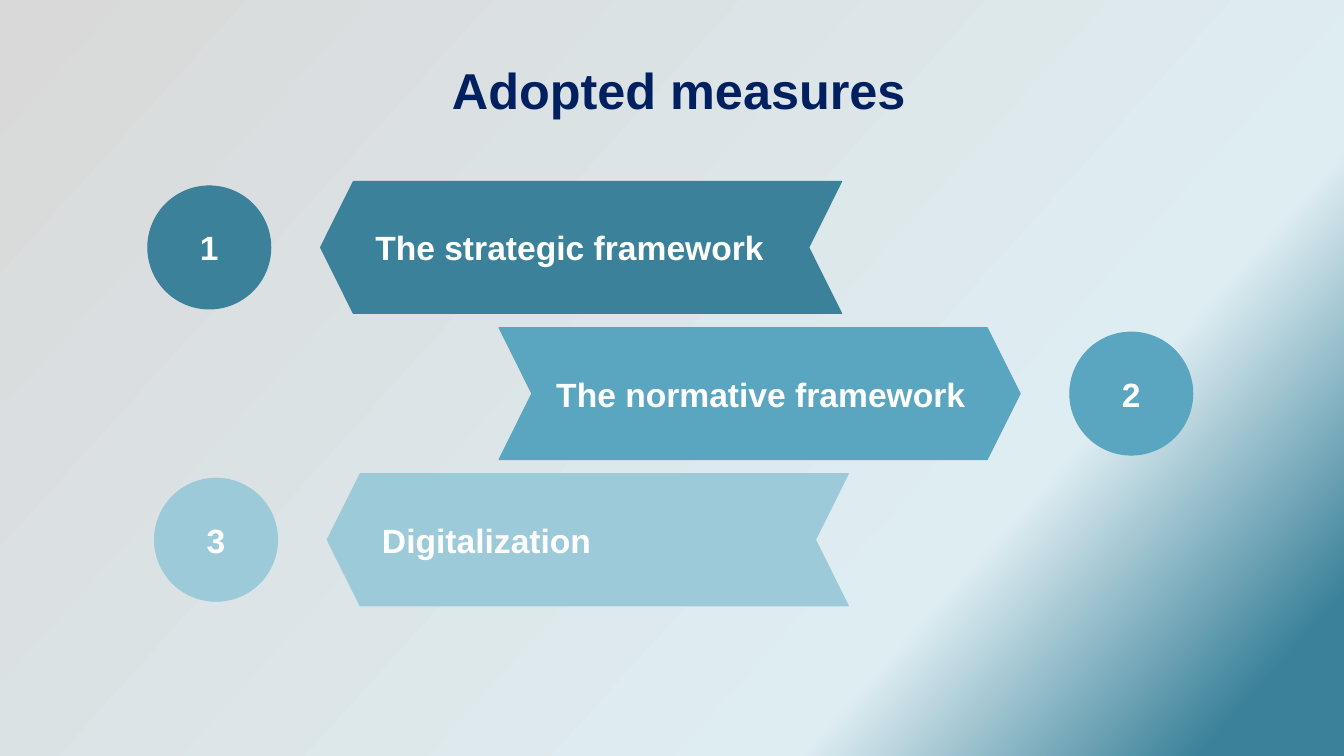
from copy import deepcopy

from pptx import Presentation, util as u
from pptx.dml.color import RGBColor
from pptx.enum import shapes, text
from pptx.oxml.ns import qn


def rgb(value):
    return RGBColor.from_string(value)


class Deck:
    FONT = "Arial"
    COLUMNS, ROWS = 40, 30
    BANNER_W, BANNER_H = 15.51, 5.24
    CIRCLE_W, CIRCLE_H = 3.66, 4.88
    LABEL_W, LABEL_H = 12.84, 2.08
    GAP = 1.48

    def __init__(self):
        self.deck = Presentation()
        self.deck.slide_width = u.Inches(13.33)
        self.deck.slide_height = u.Inches(7.5)
        self.slide = self.deck.slides.add_slide(self.deck.slide_layouts[5])

    def box(self, left, top, width, height):
        column = self.deck.slide_width / self.COLUMNS
        row = self.deck.slide_height / self.ROWS
        return [round(n) for n in (left * column, top * row, width * column, height * row)]

    def background(self, stops, angle):
        fill = self.slide.background.fill
        fill.gradient()
        fill.gradient_angle = 360 - angle
        stop_list = next(self.slide.element.iter(qn("a:gsLst")))
        while len(stop_list) < len(stops):
            stop_list.append(deepcopy(stop_list[0]))
        for stop, (position, color) in zip(fill.gradient_stops, stops):
            stop.position = position
            stop.color.rgb = rgb(color)

    def set_words(self, shape, words, size, color, align, inset):
        frame = shape.text_frame
        frame.text = words
        frame.word_wrap = True
        frame.auto_size = text.MSO_AUTO_SIZE.NONE
        frame.vertical_anchor = text.MSO_ANCHOR.MIDDLE
        frame.margin_left = frame.margin_right = u.Inches(inset)
        frame.margin_top = frame.margin_bottom = u.Inches(inset)
        paragraph = frame.paragraphs[0]
        paragraph.alignment = align
        font = paragraph.runs[0].font
        font.name, font.size, font.bold = self.FONT, u.Pt(size), True
        font.color.rgb = rgb(color)
        return paragraph

    def title(self, words, color, *place):
        heading = self.slide.shapes.title
        heading.left, heading.top, heading.width, heading.height = self.box(*place)
        paragraph = self.set_words(heading, words, 36, color, text.PP_ALIGN.CENTER, 0.13)
        paragraph.line_spacing = 0.9

    def solid(self, group, kind, color, *place):
        shape = group.shapes.add_shape(kind, *self.box(*place))
        shape.shadow.inherit = False
        shape.fill.solid()
        shape.fill.fore_color.rgb = rgb(color)
        shape.line.color.rgb = rgb(color)
        shape.line.width = u.Pt(0.75)
        return shape

    def measure(self, number, words, color, left, top, points_left):
        group = self.slide.shapes.add_group_shape()
        banner = self.solid(group, shapes.MSO_SHAPE.CHEVRON, color,
                            left, top, self.BANNER_W, self.BANNER_H)
        banner.adjustments[0] = 0.249
        if points_left:
            banner.element.spPr.find(qn("a:xfrm")).set("flipH", "1")
            circle_left = left - self.GAP - self.CIRCLE_W
            align = text.PP_ALIGN.LEFT
        else:
            circle_left = left + self.BANNER_W + self.GAP
            align = text.PP_ALIGN.RIGHT

        circle = self.solid(group, shapes.MSO_SHAPE.OVAL, color, circle_left,
                            top + (self.BANNER_H - self.CIRCLE_H) / 2,
                            self.CIRCLE_W, self.CIRCLE_H)
        self.set_words(circle, str(number), 24, "FFFFFF", text.PP_ALIGN.CENTER, 0.1)

        label = group.shapes.add_textbox(*self.box(
            left + (self.BANNER_W - self.LABEL_W) / 2,
            top + (self.BANNER_H - self.LABEL_H) / 2,
            self.LABEL_W, self.LABEL_H))
        self.set_words(label, words, 24, "FFFFFF", align, 0.1)


def main():
    deck = Deck()
    deck.background([(0, "D9D9D9"), (0.73, "DEEDF2"), (0.93, "3A8199")], 42)
    deck.title("Adopted measures", "002060", 12.24, 2.4, 15.93, 2.6)
    measures = [
        ("The strategic framework", "3A8199", 9.54, True),
        ("The normative framework", "5AA6C0", 14.85, False),
        ("Digitalization", "9CCAD9", 9.74, True),
    ]
    for index, (words, color, left, points_left) in enumerate(measures):
        deck.measure(index + 1, words, color, left, 7.2 + 5.8 * index, points_left)
    deck.deck.save("out.pptx")


if __name__ == "__main__":
    main()
